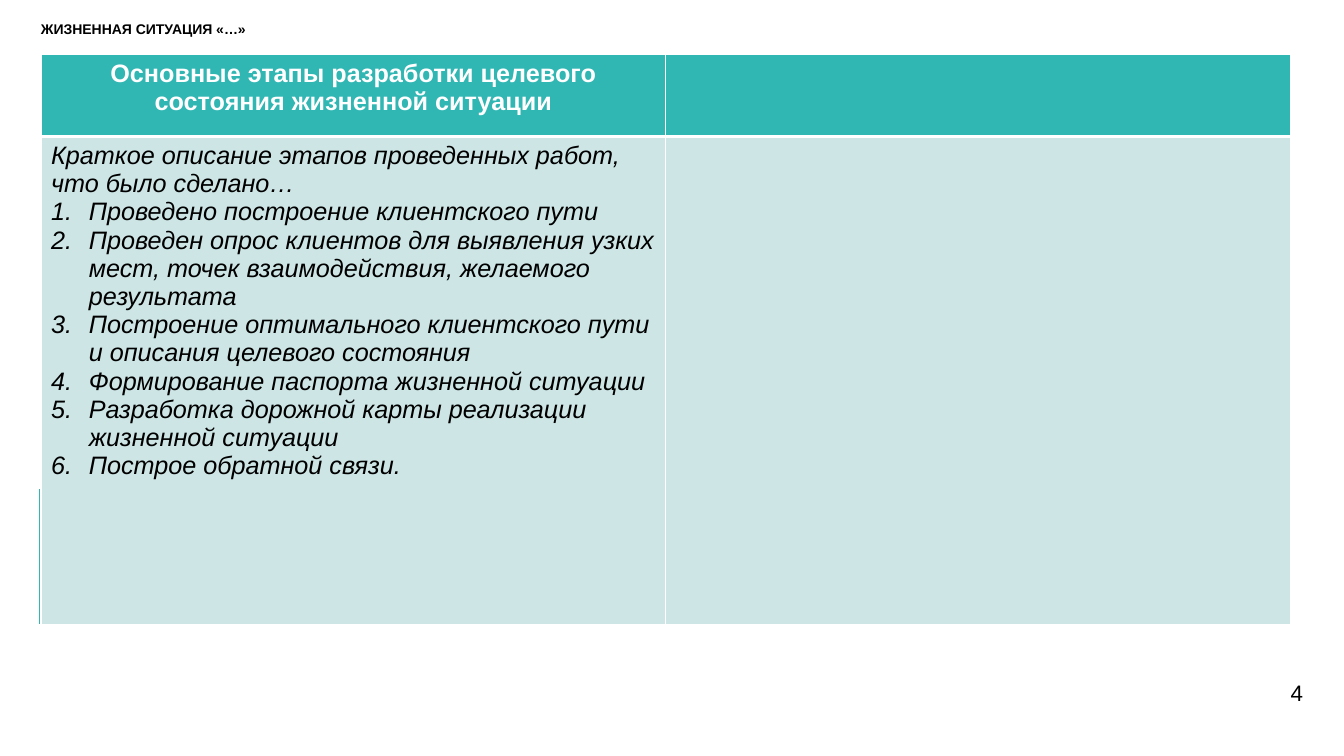
from lxml.etree import SubElement
from pptx import Presentation
from pptx.dml.color import RGBColor
from pptx.enum.shapes import MSO_CONNECTOR as Connector
from pptx.enum.text import MSO_ANCHOR as Anchor, PP_ALIGN as Align
from pptx.oxml import parse_xml
from pptx.oxml.ns import nsdecls, qn
from pptx.util import Emu, Pt

EMU_PER_PX = 9525
FONT = "Arial"
COLORS = {"teal": "30B6B3", "pale": "CDE5E5", "white": "FFFFFF", "black": "000000"}

TITLE = "ЖИЗНЕННАЯ СИТУАЦИЯ «…»"
HEADING = "Основные этапы разработки целевого состояния жизненной ситуации"
INTRO = "Краткое описание этапов проведенных работ, что было сделано…"
STAGES = [
    "Проведено построение клиентского пути",
    "Проведен опрос клиентов для выявления узких мест, точек взаимодействия, "
    "желаемого результата",
    "Построение оптимального клиентского пути и описания целевого состояния",
    "Формирование паспорта жизненной ситуации",
    "Разработка дорожной карты реализации жизненной ситуации",
    "Построе обратной связи.",
]

LEFT, TABLE_TOP, COLUMN_WIDTH = 39, 52, 595
ROW_HEIGHTS = (78, 465)
INDENT = 36


def px(value):
    return Emu(value * EMU_PER_PX)


def color(name):
    return RGBColor.from_string(COLORS[name])


def add_run(paragraph, text, size, color_name="black", bold=False, italic=False):
    run = paragraph.add_run()
    run.text = text
    font = run.font
    font.name, font.size, font.bold, font.italic = FONT, Pt(size), bold, italic
    font.color.rgb = color(color_name)


def add_label(slide, box, text, size, bold=False, align=Align.LEFT,
              anchor=Anchor.TOP, spacing=1.0):
    frame = slide.shapes.add_textbox(*map(px, box)).text_frame
    frame.word_wrap = True
    frame.vertical_anchor = anchor
    frame.margin_left = frame.margin_top = frame.margin_right = frame.margin_bottom = 0
    paragraph = frame.paragraphs[0]
    paragraph.alignment = align
    paragraph.line_spacing = spacing
    add_run(paragraph, text, size, bold=bold)


def add_side_line(slide, x, top, bottom):
    line = slide.shapes.add_connector(Connector.STRAIGHT, px(x), px(top), px(x), px(bottom))
    line.line.color.rgb = color("teal")
    line.line.width = Pt(2.25)
    SubElement(line._element.spPr, qn("a:effectLst"))


def style_cell(cell, fill_name, top_width, bottom_width):
    cell.fill.solid()
    cell.fill.fore_color.rgb = color(fill_name)
    properties = cell._tc.get_or_add_tcPr()
    widths = {"lnL": 1, "lnR": 1, "lnT": top_width, "lnB": bottom_width}
    for index, (side, width) in enumerate(widths.items()):
        properties.insert(index, parse_xml(
            f'<a:{side} {nsdecls("a")} w="{Pt(width)}"><a:solidFill>'
            f'<a:srgbClr val="{COLORS["white"]}"/></a:solidFill></a:{side}>'))


def number_paragraph(paragraph):
    properties = paragraph._p.get_or_add_pPr()
    properties.set("marL", str(px(INDENT)))
    properties.set("indent", str(-px(INDENT)))
    SubElement(properties, qn("a:buFont"), typeface=FONT)
    SubElement(properties, qn("a:buAutoNum"), type="arabicPeriod")


def add_stage_table(slide):
    table = slide.shapes.add_table(
        2, 2, px(LEFT), px(TABLE_TOP), px(2 * COLUMN_WIDTH), px(sum(ROW_HEIGHTS))).table
    for column in table.columns:
        column.width = px(COLUMN_WIDTH)
    row_styles = (("teal", 1, 3), ("pale", 3, 1))
    for row, height, row_style in zip(table.rows, ROW_HEIGHTS, row_styles):
        row.height = px(height)
        for cell in row.cells:
            style_cell(cell, *row_style)

    # Heading cell
    heading = table.cell(0, 0).text_frame.paragraphs[0]
    heading.alignment = Align.CENTER
    add_run(heading, HEADING, 18, "white", bold=True)

    # Introduction and numbered stages
    frame = table.cell(1, 0).text_frame
    add_run(frame.paragraphs[0], INTRO, 18, italic=True)
    for stage in STAGES:
        paragraph = frame.add_paragraph()
        number_paragraph(paragraph)
        add_run(paragraph, stage, 18, italic=True)


def main():
    presentation = Presentation()
    presentation.slide_width, presentation.slide_height = px(1280), px(720)
    slide = presentation.slides.add_slide(presentation.slide_layouts[6])

    # Title and page number
    add_label(slide, (LEFT, 21, 1061, 37), TITLE, 10, bold=True, spacing=0.9)
    add_label(slide, (1139, 639, 102, 41), "4", 16, align=Align.RIGHT, anchor=Anchor.MIDDLE)

    # Accent line behind the table
    add_side_line(slide, LEFT, 466, 594)
    add_stage_table(slide)
    presentation.save("out.pptx")


if __name__ == "__main__":
    main()
